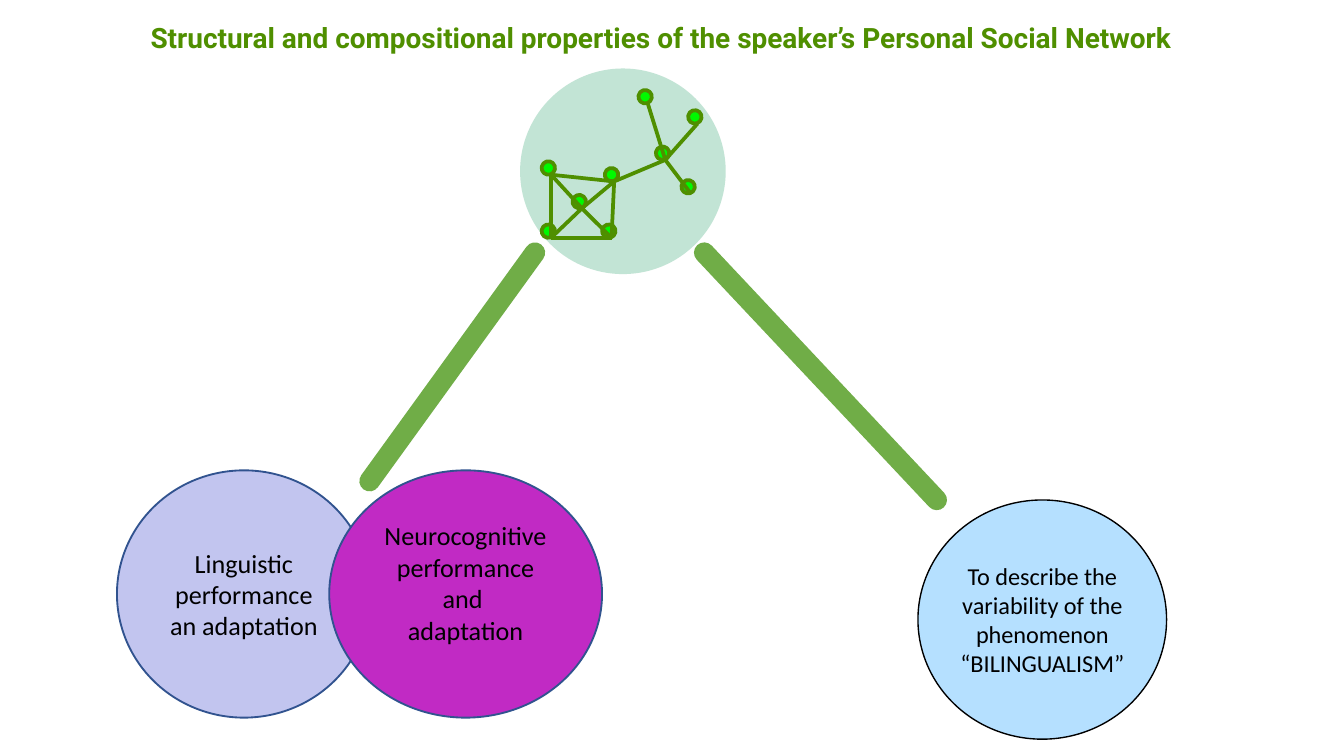
from dataclasses import dataclass

from lxml import etree
from pptx import Presentation
from pptx.dml.color import RGBColor
from pptx.enum import shapes, text
from pptx.oxml.ns import qn
from pptx.util import Inches, Pt


@dataclass(frozen=True)
class Theme:
    """Colours, fonts and type sizes of the slide."""
    green: str = "4F8F00"
    node: str = "00F900"
    hub: str = "009051"
    branch: str = "70AD47"
    lilac: str = "535BD3"
    purple: str = "C12AC4"
    sky: str = "0096FF"
    navy: str = "31538F"
    black: str = "000000"
    title_font: str = "Roboto"
    body_font: str = "Calibri"
    title_size: float = 15
    body_size: float = 14
    small_size: float = 13


THEME = Theme()

NODES = {
    "top": (0.95, 0.26), "right": (1.32, 0.41), "centre": (1.08, 0.68),
    "low": (1.27, 0.93), "sq_tr": (0.70, 0.84), "sq_tl": (0.23, 0.79),
    "sq_bl": (0.23, 1.26), "sq_br": (0.68, 1.26), "sq_mid": (0.46, 1.04),
}
EDGES = [
    ("centre", "top"), ("centre", "right"), ("centre", "low"), ("centre", "sq_tr"),
    ("sq_tl", "sq_bl"), ("sq_bl", "sq_br"), ("sq_br", "sq_tr"), ("sq_tr", "sq_tl"),
    ("sq_mid", "sq_tl"), ("sq_mid", "sq_bl"), ("sq_mid", "sq_br"), ("sq_mid", "sq_tr"),
]


def rgb(color):
    """Return the colour object of a hex string."""
    return RGBColor.from_string(color)


def add_ellipse(parent, box, fill, alpha=100, line=None, width=1):
    """Add an ellipse with a fill, its opacity in percent and an optional outline."""
    sp = parent.add_shape(shapes.MSO_SHAPE.OVAL, *map(Inches, box))
    sp.shadow.inherit = False
    sp.fill.solid()
    sp.fill.fore_color.rgb = rgb(fill)
    if alpha < 100:
        color = sp.fill._xPr.find(qn("a:solidFill"))[0]
        etree.SubElement(color, qn("a:alpha"), val=str(alpha * 1000))
    if line:
        sp.line.color.rgb = rgb(line)
        sp.line.width = Pt(width)
    else:
        sp.line.fill.background()
    return sp


def add_line(parent, start, end, color, width):
    """Add a straight connector between two points."""
    sp = parent.add_connector(shapes.MSO_CONNECTOR.STRAIGHT,
                              *map(Inches, (*start, *end)))
    sp.line.color.rgb = rgb(color)
    sp.line.width = Pt(width)
    etree.SubElement(sp._element.spPr, qn("a:effectLst"))
    return sp


def set_text(sp, words, font, size, color, insets, bold=False, align=None):
    """Write one paragraph into a shape; insets are left, top, right, bottom."""
    tf = sp.text_frame
    tf.word_wrap = True
    tf.margin_left, tf.margin_top, tf.margin_right, tf.margin_bottom = map(Inches, insets)
    p = tf.paragraphs[0]
    p.text = words
    p.alignment = align
    p.font.name, p.font.size, p.font.bold = font, Pt(size), bold
    p.font.color.rgb = rgb(color)


def add_title(slide, box):
    """Place the slide title."""
    sp = slide.shapes.add_textbox(*map(Inches, box))
    set_text(sp, "Structural and compositional properties of the speaker’s "
             "Personal Social Network", THEME.title_font, THEME.title_size,
             THEME.green, [0.03] * 4, bold=True)


def add_network(slide, box):
    """Draw the hub circle and the grouped network of nodes and ties inside it."""
    add_ellipse(slide.shapes, box, THEME.hub, alpha=24)
    left, top = box[:2]
    joints = {name: (left + x, top + y) for name, (x, y) in NODES.items()}
    group = slide.shapes.add_group_shape().shapes
    for x, y in joints.values():
        dot = add_ellipse(group, (x - 0.07, y - 0.1, 0.1, 0.1), THEME.node,
                          line=THEME.green, width=2)
        dot.rotation = 162
    for a, b in EDGES:
        add_line(group, joints[a], joints[b], THEME.green, 2)


def add_branches(slide, box):
    """Draw the two thick branches that spread downwards within the box."""
    left, top, width, height = box
    ends = [((1.23, 0), (0, 1.7)), ((2.49, 0), (width, height))]
    for (x1, y1), (x2, y2) in ends:
        sp = add_line(slide.shapes, (left + x1, top + y1), (left + x2, top + y2),
                      THEME.branch, 11)
        sp.line._get_or_add_ln().set("cap", "rnd")


def add_topic(slide, box, words, fill, alpha, line, width, size, insets):
    """Place one topic ellipse with centred text."""
    sp = add_ellipse(slide.shapes, box, fill, alpha, line, width)
    sp.text_frame.vertical_anchor = text.MSO_ANCHOR.MIDDLE
    set_text(sp, words, THEME.body_font, size, THEME.black, insets,
             align=text.PP_ALIGN.CENTER)


def main():
    """Build and save the slide."""
    prs = Presentation()
    prs.slide_width, prs.slide_height = Inches(10), Inches(10 * 9 / 16)
    s = prs.slides.add_slide(prs.slide_layouts[6])
    add_title(s, (1.09, 0.12, 8.39, 0.42))
    add_network(s, (3.87, 0.51, 1.53, 1.53))
    add_branches(s, (2.75, 1.88, 4.22, 1.84))
    add_topic(s, (0.87, 3.5, 1.89, 1.84), "Linguistic performance an adaptation",
              THEME.lilac, 35, THEME.navy, 1, THEME.body_size, (0.1, 0.05, 0.1, 0.05))
    add_topic(s, (2.45, 3.5, 2.03, 1.84), "Neurocognitive performance and \vadaptation",
              THEME.purple, 100, THEME.navy, 1, THEME.body_size, (0.1, 0.05, 0.1, 0.22))
    add_topic(s, (6.83, 3.72, 1.85, 1.78),
              "To describe the variability of the phenomenon “BILINGUALISM”",
              THEME.sky, 29, THEME.black, 0.75, THEME.small_size, [0.03] * 4)
    prs.save("out.pptx")


if __name__ == "__main__":
    main()
